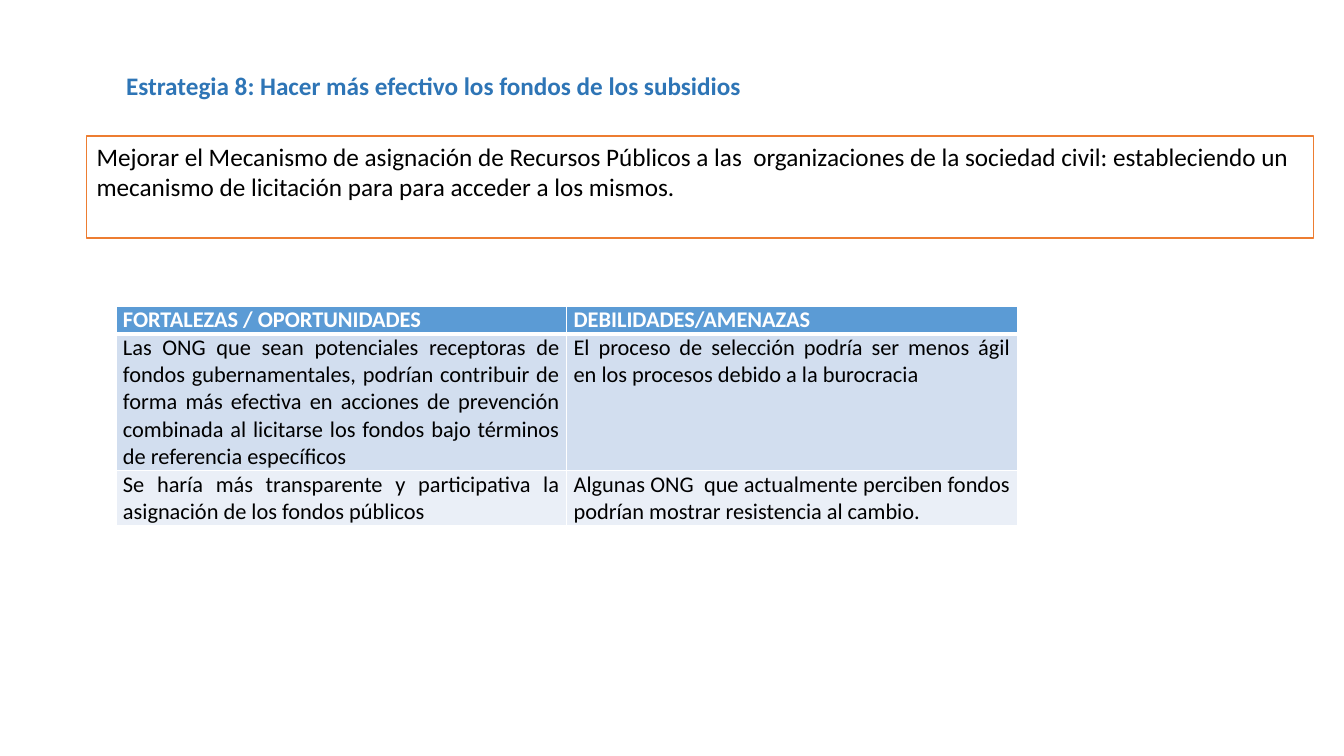
import pptx
import pptx.util
import pptx.dml.color
import pptx.enum.shapes
import pptx.enum.text
import pptx.oxml
import pptx.oxml.ns
from dataclasses import dataclass

TITLE = "Estrategia 8: Hacer más efectivo los fondos de los subsidios"
GOAL = ("Mejorar el Mecanismo de asignación de Recursos Públicos a las  organizaciones "
        "de la sociedad civil: estableciendo un mecanismo de licitación para para "
        "acceder a los mismos.")
ROWS = [
    ("FORTALEZAS / OPORTUNIDADES", "DEBILIDADES/AMENAZAS"),
    ("Las ONG que sean potenciales receptoras de fondos gubernamentales, podrían "
     "contribuir de forma más efectiva en acciones de prevención combinada al "
     "licitarse los fondos bajo términos de referencia específicos",
     "El proceso de selección podría ser menos ágil en los procesos debido a la "
     "burocracia"),
    ("Se haría más transparente y participativa la asignación de los fondos públicos",
     "Algunas ONG  que actualmente perciben fondos podrían mostrar resistencia al "
     "cambio."),
]


@dataclass(frozen=True)
class Theme:
    font: str = "Calibri"
    head: int = 18
    cell: int = 16
    title: str = "2E75B6"
    ink: str = "000000"
    paper: str = "FFFFFF"
    edge: str = "ED7D31"
    fills: tuple = ("5B9BD5", "D2DEEF", "EAEFF7")


T = Theme()
WIDE, HIGH = 13.33, 7.5
LEFT = 1.15
COL = 4.47
TALL = (0.25, 1.34, 0.54)
Align = pptx.enum.text.PP_ALIGN
Inch = pptx.util.Inches
Pt = pptx.util.Pt


def rgb(code):
    return pptx.dml.color.RGBColor.from_string(code)


def write(frame, text, size=T.head, color=T.ink, bold=False, align=Align.LEFT):
    frame.word_wrap = True
    frame.vertical_anchor = pptx.enum.text.MSO_ANCHOR.TOP
    para = frame.paragraphs[0]
    para.alignment = align
    run = para.add_run()
    run.text = text
    run.font.name, run.font.size, run.font.bold = T.font, Pt(size), bold
    run.font.color.rgb = rgb(color)


def border(cell, **sides):
    """Draw white cell edges; each keyword is a side tag and its width in points."""
    props = cell._tc.get_or_add_tcPr()
    for spot, (side, width) in enumerate(sides.items()):
        props.insert(spot, pptx.oxml.parse_xml(
            f'<a:{side} {pptx.oxml.ns.nsdecls("a")} w="{Pt(width)}"><a:solidFill>'
            f'<a:srgbClr val="{T.paper}"/></a:solidFill></a:{side}>'))


def head(slide):
    box = slide.shapes.title
    box.left, box.top = Inch(LEFT), Inch(0.65)
    box.width, box.height = Inch(9.25), Inch(0.71)
    box.text_frame.auto_size = pptx.enum.text.MSO_AUTO_SIZE.NONE
    write(box.text_frame, TITLE, color=T.title, bold=True)


def goal(slide):
    box = slide.shapes.add_shape(pptx.enum.shapes.MSO_SHAPE.RECTANGLE,
                                 Inch(0.86), Inch(1.35), Inch(12.17), Inch(1.01))
    box.shadow.inherit = False
    box.fill.solid()
    box.fill.fore_color.rgb = rgb(T.paper)
    box.line.color.rgb = rgb(T.edge)
    box.line.width = Pt(1)
    write(box.text_frame, GOAL)


def grid(slide):
    cols = len(ROWS[0])
    table = slide.shapes.add_table(len(ROWS), cols, Inch(LEFT), Inch(3.04),
                                   Inch(COL * cols), Inch(sum(TALL))).table
    for col in table.columns:
        col.width = Inch(COL)
    for r, texts in enumerate(ROWS):
        table.rows[r].height = Inch(TALL[r])
        top = r == 0
        for c, text in enumerate(texts):
            cell = table.cell(r, c)
            cell.margin_left = cell.margin_right = Inch(0.07)
            cell.margin_top = cell.margin_bottom = 0
            cell.fill.solid()
            cell.fill.fore_color.rgb = rgb(T.fills[r])
            write(cell.text_frame, text, size=T.cell, bold=top,
                  color=T.paper if top else T.ink, align=Align.JUSTIFY)
            border(cell, lnL=1, lnR=1, lnT=3 if r == 1 else 1, lnB=3 if top else 1)


def main():
    deck = pptx.Presentation()
    deck.slide_width, deck.slide_height = Inch(WIDE), Inch(HIGH)
    slide = deck.slides.add_slide(deck.slide_layouts.get_by_name("Title Only"))
    head(slide)
    goal(slide)
    grid(slide)
    deck.save("out.pptx")


if __name__ == "__main__":
    main()
